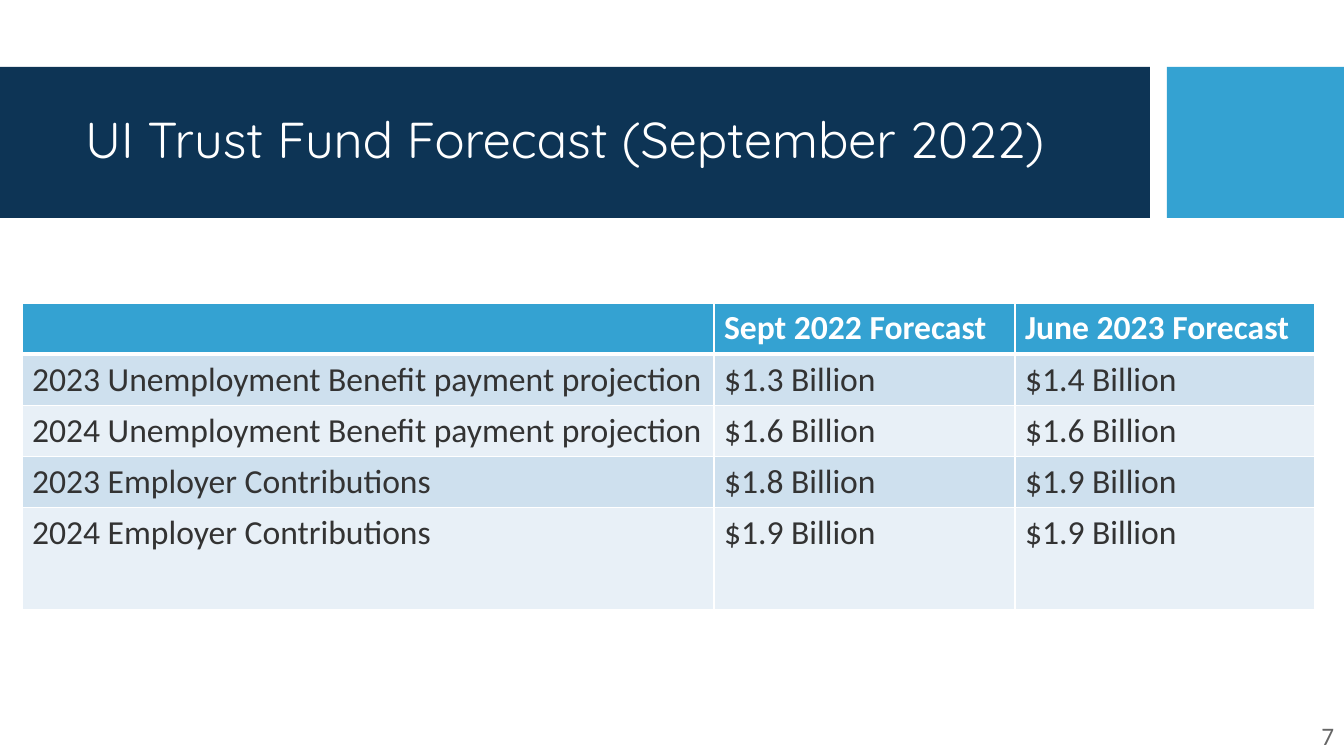
from lxml import etree
from pptx import Presentation
from pptx.dml.color import RGBColor
from pptx.enum import shapes, text
from pptx.oxml import ns

PX = 914400 / 100.8
NAVY, BLUE, WHITE, INK, GRAY = "0D3455", "34A2D2", "FFFFFF", "333333", "666666"
BANDS = ["CEE0EE", "E8F0F7"]


def box(*sides):
    """Turn px lengths into EMU."""
    return [round(side * PX) for side in sides]


def write(frame, words, size=24, font="Calibri", color=INK, bold=False, align=None):
    para = frame.paragraphs[0]
    para.alignment = align
    run = para.add_run()
    run.text = words
    run.font.size = round(size * 12700)
    run.font.name = font
    run.font.bold = bold
    run.font.color.rgb = RGBColor.from_string(color)


deck = Presentation()
deck.slide_width, deck.slide_height = box(1344, 756)
slide = deck.slides.add_slide(deck.slide_layouts[5])

# Banner
for left, width, color in [(0, 1150, NAVY), (1167, 177, BLUE)]:
    bar = slide.shapes.add_shape(
        shapes.MSO_SHAPE.RECTANGLE, *box(left, 67, width, 151))
    bar.shadow.inherit = False
    bar.fill.solid()
    bar.fill.fore_color.rgb = RGBColor.from_string(color)
    bar.line.fill.background()

title = slide.shapes.title
title.left, title.top, title.width, title.height = box(75, 83, 1059, 119)
frame = title.text_frame
frame.word_wrap = True
frame.auto_size = text.MSO_AUTO_SIZE.NONE
frame.vertical_anchor = text.MSO_ANCHOR.MIDDLE
write(frame, "UI Trust Fund Forecast (September 2022)", 36, "Quicksand", WHITE,
      align=text.PP_ALIGN.LEFT)
frame.paragraphs[0].line_spacing = 0.9
slide.shapes._spTree.append(title._element)  # bring in front of the banner

# Forecast table
rows = [
    ["", "Sept 2022 Forecast", "June 2023 Forecast"],
    ["2023 Unemployment Benefit payment projection", "$1.3 Billion", "$1.4 Billion"],
    ["2024 Unemployment Benefit payment projection", "$1.6 Billion", "$1.6 Billion"],
    ["2023 Employer Contributions", "$1.8 Billion", "$1.9 Billion"],
    ["2024 Employer Contributions", "$1.9 Billion", "$1.9 Billion"],
]
widths = box(692, 301, 300)
heights = box(51, 51, 51, 51, 102)
table = slide.shapes.add_table(
    len(rows), len(widths), *box(22, 303), sum(widths), sum(heights)).table
for col, width in zip(table.columns, widths):
    col.width = width

for r, row in enumerate(rows):
    table.rows[r].height = heights[r]
    head = r == 0
    for c, words in enumerate(row):
        cell = table.cell(r, c)
        if words:
            write(cell.text_frame, words, color=WHITE if head else INK, bold=head)
        props = cell._tc.get_or_add_tcPr()
        for side in "LRTB":
            thick = (head and side == "B") or (r == 1 and side == "T")
            edge = etree.SubElement(props, ns.qn(f"a:ln{side}"),
                                    w=str(12700 * (3 if thick else 1)))
            fill = etree.SubElement(edge, ns.qn("a:solidFill"))
            etree.SubElement(fill, ns.qn("a:srgbClr"), val=WHITE)
        cell.fill.solid()
        cell.fill.fore_color.rgb = RGBColor.from_string(
            BLUE if head else BANDS[(r - 1) % 2])

# Page number
page = slide.shapes.add_textbox(*box(1272, 715, 72, 41)).text_frame
page.word_wrap = True
write(page, "7", 18, color=GRAY, align=text.PP_ALIGN.RIGHT)

deck.save("out.pptx")
